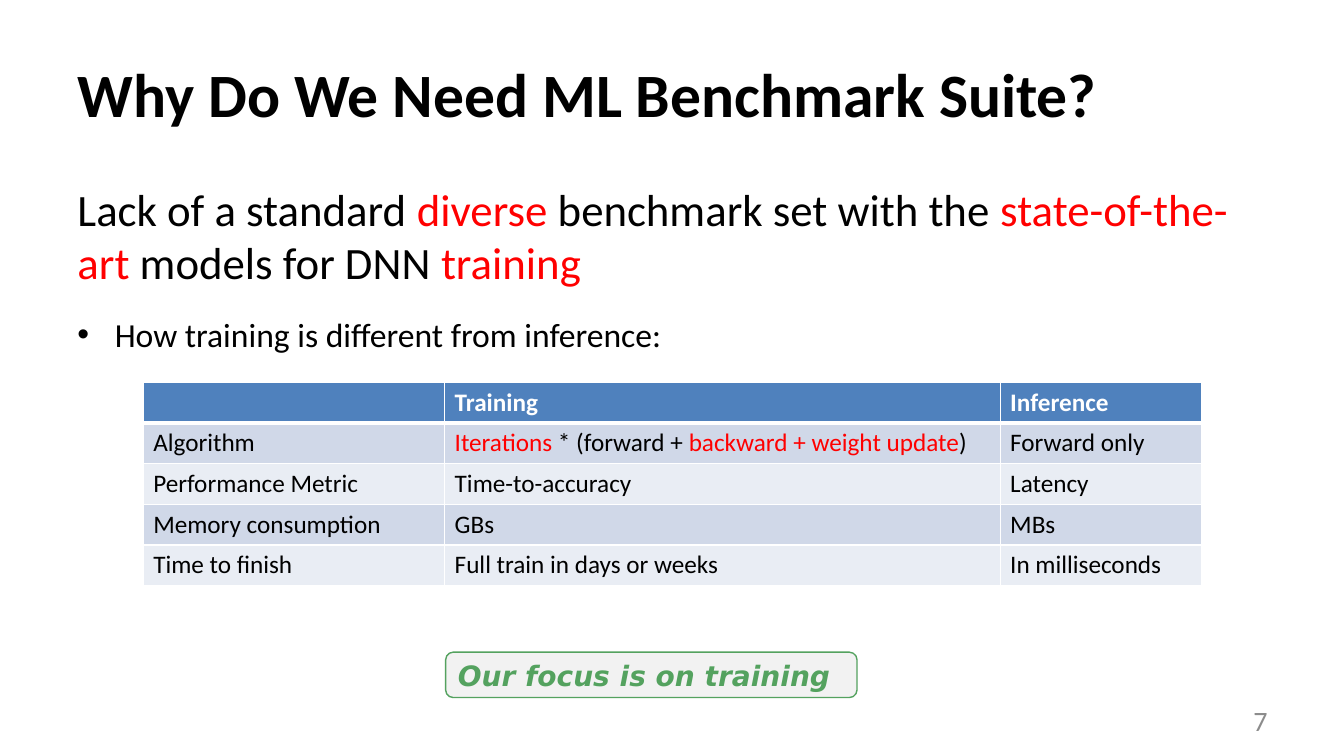
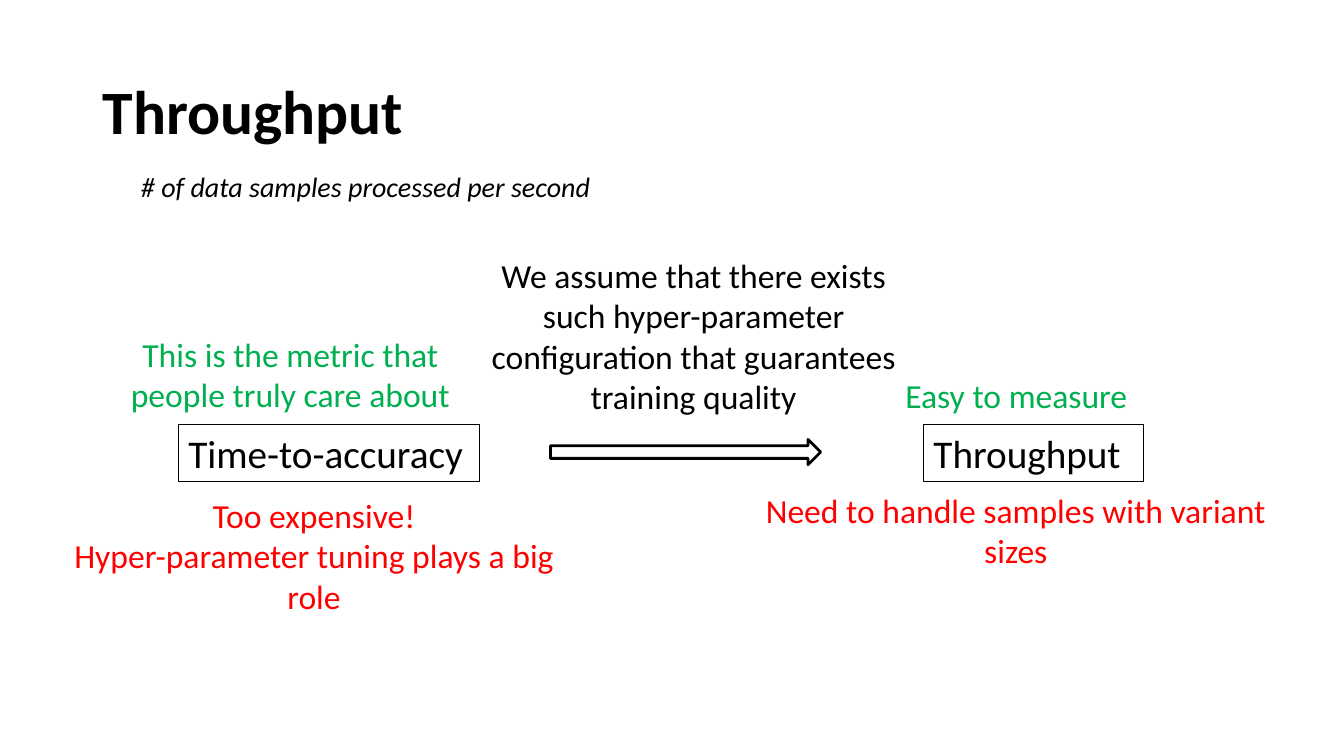
from lxml import etree
from pptx import Presentation
from pptx.dml.color import RGBColor
from pptx.enum.shapes import MSO_SHAPE
from pptx.enum.text import MSO_ANCHOR, PP_ALIGN
from pptx.oxml.ns import qn
from pptx.util import Emu, Pt

RECT = MSO_SHAPE.RECTANGLE
ROUNDED = MSO_SHAPE.ROUNDED_RECTANGLE
ARROW = MSO_SHAPE.RIGHT_ARROW
TOP, MIDDLE = MSO_ANCHOR.TOP, MSO_ANCHOR.MIDDLE
LEFT, CENTER, RIGHT = PP_ALIGN.LEFT, PP_ALIGN.CENTER, PP_ALIGN.RIGHT

EMU_PER_PX = 9144
BLACK, WHITE, RED, GREEN = "000000", "FFFFFF", "FF0000", "00B050"
GRAY, FOCUS_GREEN, FOCUS_FILL = "8C8C8C", "54A25F", "F2F2F2"
HEADER_FILL, BAND_FILLS = "4F81BD", ("D0D8E8", "E9EDF4")


def px(*lengths):
    return [Emu(length * EMU_PER_PX) for length in lengths]


def color(value):
    return RGBColor.from_string(value)


def write(paragraph, text, size=24, ink=BLACK, bold=False, italic=False,
          font="Calibri", align=LEFT, before=0, bullet_indent=0):
    paragraph.alignment = align
    paragraph.space_before = Pt(before)
    if bullet_indent:
        indent, = px(bullet_indent)
        properties = paragraph._p.get_or_add_pPr()
        properties.set("marL", str(indent))
        properties.set("indent", str(-indent))
        etree.SubElement(properties, qn("a:buFont"), typeface="Arial")
        etree.SubElement(properties, qn("a:buChar"), char="•")
    pieces = [(text, ink)] if isinstance(text, str) else text
    for words, piece_ink in pieces:
        run = paragraph.add_run()
        run.text = words
        run.font.name = font
        run.font.size = Pt(size)
        run.font.bold = bold
        run.font.italic = italic
        run.font.color.rgb = color(piece_ink)


def add_cell_border(cell, position, side, width):
    line = etree.Element(qn(f"a:{side}"), w=str(Pt(width)))
    fill = etree.SubElement(line, qn("a:solidFill"))
    etree.SubElement(fill, qn("a:srgbClr"), val=WHITE)
    cell._tc.get_or_add_tcPr().insert(position, line)


class Deck:
    def __init__(self):
        self.presentation = Presentation()
        self.presentation.slide_width, self.presentation.slide_height = px(1333, 750)
        self.slide = None

    def add_slide(self, title, *title_area):
        layout = self.presentation.slide_layouts[6]
        self.slide = self.presentation.slides.add_slide(layout)
        self.text(title, *title_area, size=44, bold=True, anchor=MIDDLE)

    def fill_frame(self, frame, paragraphs, anchor, wrap, style):
        frame.word_wrap = wrap
        frame.vertical_anchor = anchor
        lines = [paragraphs] if isinstance(paragraphs, str) else paragraphs
        for index, line in enumerate(lines):
            words, own_style = line if isinstance(line, tuple) else (line, {})
            paragraph = frame.add_paragraph() if index else frame.paragraphs[0]
            write(paragraph, words, **{**style, **own_style})

    def text(self, paragraphs, *area, anchor=TOP, wrap=True, **style):
        box = self.slide.shapes.add_textbox(*px(*area))
        self.fill_frame(box.text_frame, paragraphs, anchor, wrap, style)

    def shape(self, kind, *area, line=BLACK, width=0.75, fill=None,
              paragraphs=(), anchor=TOP, **style):
        shape = self.slide.shapes.add_shape(kind, *px(*area))
        shape.shadow.inherit = False
        shape.line.color.rgb = color(line)
        shape.line.width = Pt(width)
        if fill:
            shape.fill.solid()
            shape.fill.fore_color.rgb = color(fill)
        else:
            shape.fill.background()
        self.fill_frame(shape.text_frame, paragraphs, anchor, True, style)

    def table(self, rows, column_widths, *area):
        table = self.slide.shapes.add_table(
            len(rows), len(column_widths), *px(*area)).table
        for column, width in zip(table.columns, px(*column_widths)):
            column.width = width
        for row_index, row in enumerate(rows):
            header = row_index == 0
            fill = HEADER_FILL if header else BAND_FILLS[(row_index - 1) % 2]
            for column_index, words in enumerate(row):
                cell = table.cell(row_index, column_index)
                cell.fill.solid()
                cell.fill.fore_color.rgb = color(fill)
                if words:
                    write(cell.text_frame.paragraphs[0], words, size=18,
                          bold=header, ink=WHITE if header else BLACK)
                widths = {"lnL": 1, "lnR": 1, "lnT": 3 if row_index == 1 else 1,
                          "lnB": 3 if header else 1}
                for position, (side, width) in enumerate(widths.items()):
                    add_cell_border(cell, position, side, width)

    def page_number(self, number):
        self.text(number, 956, 695, 311, 40, size=20, ink=GRAY,
                  align=RIGHT, anchor=MIDDLE)


def benchmark_slide(deck):
    deck.add_slide("Why Do We Need ML Benchmark Suite?", 67, 30, 1200, 125)
    need = [("Lack of a standard ", BLACK), ("diverse", RED),
            (" benchmark set with the ", BLACK), ("state-of-the-art", RED),
            (" models for DNN ", BLACK), ("training", RED)]
    deck.text([(need, {"size": 32}),
               ("How training is different from inference:",
                {"before": 17.5, "bullet_indent": 37})],
              67, 175, 1200, 495)
    deck.page_number("7")
    deck.shape(ROUNDED, 442, 647, 408, 45, line=FOCUS_GREEN, width=1,
               fill=FOCUS_FILL, paragraphs="Our focus is on training",
               anchor=MIDDLE, size=20, ink=FOCUS_GREEN, bold=True, italic=True,
               font="DejaVu Sans")
    training_steps = [("Iterations", RED), (" * (forward + ", BLACK),
                      ("backward + weight update", RED), (")", BLACK)]
    deck.table([
        ("", "Training", "Inference"),
        ("Algorithm", training_steps, "Forward only"),
        ("Performance Metric", "Time-to-accuracy", "Latency"),
        ("Memory consumption", "GBs", "MBs"),
        ("Time to finish", "Full train in days or weeks", "In milliseconds"),
    ], (299, 551, 200), 142, 379, 1050, 202)


def throughput_slide(deck):
    deck.add_slide("Throughput", 92, 36, 1150, 145)
    deck.text("# of data samples processed per second", 130, 163, 469, 44,
              size=20, italic=True, wrap=False)
    for metric, left, width in (("Time-to-accuracy", 177, 299),
                                ("Throughput", 916, 218)):
        deck.shape(RECT, left, 421, width, 57, paragraphs=metric, size=28)
    remarks = (
        (["Too expensive!", "Hyper-parameter tuning plays a big role"],
         RED, (60, 486, 503, 131)),
        ("This is the metric that people truly care about",
         GREEN, (100, 326, 376, 91)),
        ("Easy to measure", GREEN, (843, 367, 330, 50)),
        ("Need to handle samples with variant sizes", RED, (726, 481, 563, 91)),
    )
    for remark, ink, area in remarks:
        deck.shape(RECT, *area, line=WHITE, paragraphs=remark, ink=ink,
                   align=CENTER)
    deck.text("We assume that there exists such hyper-parameter configuration "
              "that guarantees training quality", 476, 248, 424, 172,
              align=CENTER)
    deck.shape(ARROW, 546, 436, 268, 25, width=2, fill=WHITE)


def main():
    deck = Deck()
    benchmark_slide(deck)
    throughput_slide(deck)
    deck.presentation.save("out.pptx")


if __name__ == "__main__":
    main()
